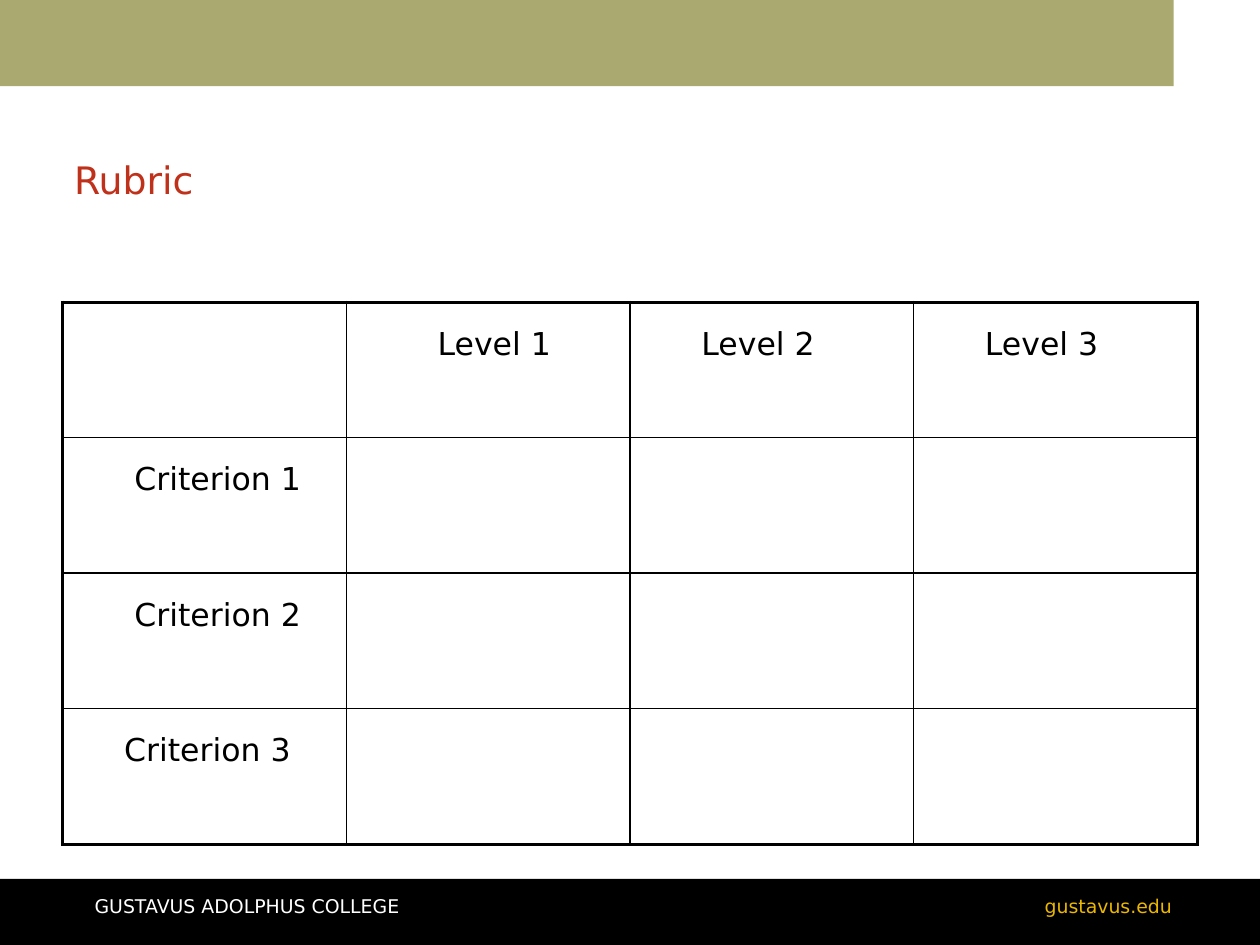
from lxml import etree
from pptx import Presentation
from pptx import util as u
from pptx.dml.color import RGBColor
from pptx.enum import shapes, text
from pptx.oxml import ns

Cm, Pt = u.Cm, u.Pt
FONT = "DejaVu Sans"
COLORS = {"olive": "AAAA70", "black": "000000", "white": "FFFFFF",
          "gold": "EBB700", "red": "BF311A"}
SIZE = 4
MARGIN = 0.25
LABELS = {(0, 1): ("Level 1", 1.79), (0, 2): ("Level 2", 1.35),
          (0, 3): ("Level 3", 1.35), (1, 0): ("Criterion 1", 1.35),
          (2, 0): ("Criterion 2", 1.35), (3, 0): ("Criterion 3", 1.12)}


def add_bar(s, color, *box):
    bar = s.shapes.add_shape(shapes.MSO_SHAPE.RECTANGLE, *map(Cm, box))
    bar.shadow.inherit = False
    bar.fill.solid()
    bar.fill.fore_color.rgb = RGBColor.from_string(COLORS[color])
    bar.line.fill.background()


def write(tf, words, size, color, **paragraph_format):
    p = tf.paragraphs[0]
    for name, value in paragraph_format.items():
        setattr(p, name, value)
    r = p.add_run()
    r.text = words
    for name, value in {"name": FONT, "size": Pt(size)}.items():
        setattr(r.font, name, value)
    r.font.color.rgb = RGBColor.from_string(COLORS[color])


def add_text(s, box, words, size, color, frame_format, **paragraph_format):
    tf = s.shapes.add_textbox(*map(Cm, box)).text_frame
    for name, value in {"word_wrap": True, **frame_format}.items():
        setattr(tf, name, value)
    write(tf, words, size, color, **paragraph_format)


def set_borders(cell, row, col):
    outer = {"lnL": col == 0, "lnR": col == SIZE - 1,
             "lnT": row == 0, "lnB": row == SIZE - 1}
    tcPr = cell._tc.get_or_add_tcPr()
    for tag, is_outer in outer.items():
        ln = etree.SubElement(tcPr, ns.qn("a:" + tag),
                              w=str(Pt(2.25 if is_outer else 1)))
        fill = etree.SubElement(ln, ns.qn("a:solidFill"))
        etree.SubElement(fill, ns.qn("a:srgbClr"), val=COLORS["black"])


def add_rubric(s, *box):
    table = s.shapes.add_table(SIZE, SIZE, *map(Cm, box)).table
    table.first_row = table.horz_banding = False
    for row in range(SIZE):
        for col in range(SIZE):
            cell = table.cell(row, col)
            set_borders(cell, row, col)
            cell.fill.background()
            if (row, col) in LABELS:
                words, indent = LABELS[row, col]
                cell.margin_left = Cm(MARGIN + indent)
                write(cell.text_frame, words, 20, "black", line_spacing=1.5)


def main():
    prs = Presentation()
    prs.slide_width, prs.slide_height = Cm(28.22), Cm(21.17)
    s = prs.slides.add_slide(prs.slide_layouts[6])
    add_bar(s, "olive", 0, 0, 26.29, 1.93)
    add_bar(s, "black", 0, 19.69, 28.22, 1.48)
    no_margins = {f"margin_{side}": 0
                  for side in ("left", "top", "right", "bottom")}
    add_text(s, (2.12, 20.11, 12.7, 0.67), "GUSTAVUS ADOLPHUS COLLEGE", 12,
             "white", no_margins, line_spacing=0.9)
    add_text(s, (13.76, 20.11, 12.49, 0.67), "gustavus.edu", 12, "gold",
             no_margins, line_spacing=0.9, alignment=text.PP_ALIGN.RIGHT)
    add_text(s, (1.41, 2.33, 25.4, 2.33), "Rubric", 24, "red",
             {"vertical_anchor": text.MSO_ANCHOR.BOTTOM})
    add_rubric(s, 1.41, 6.77, 25.4, 12.14)
    prs.save("out.pptx")


if __name__ == "__main__":
    main()
